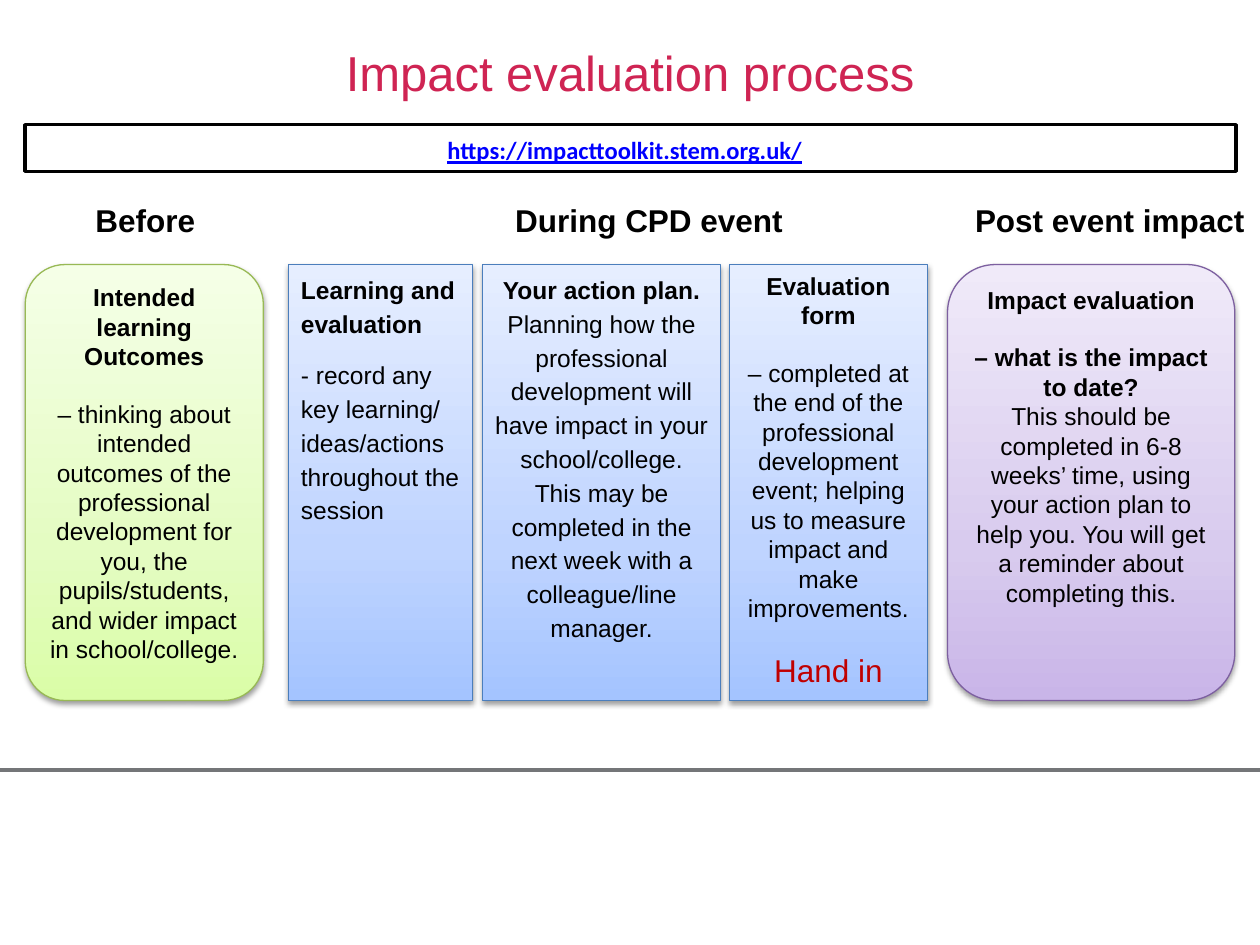
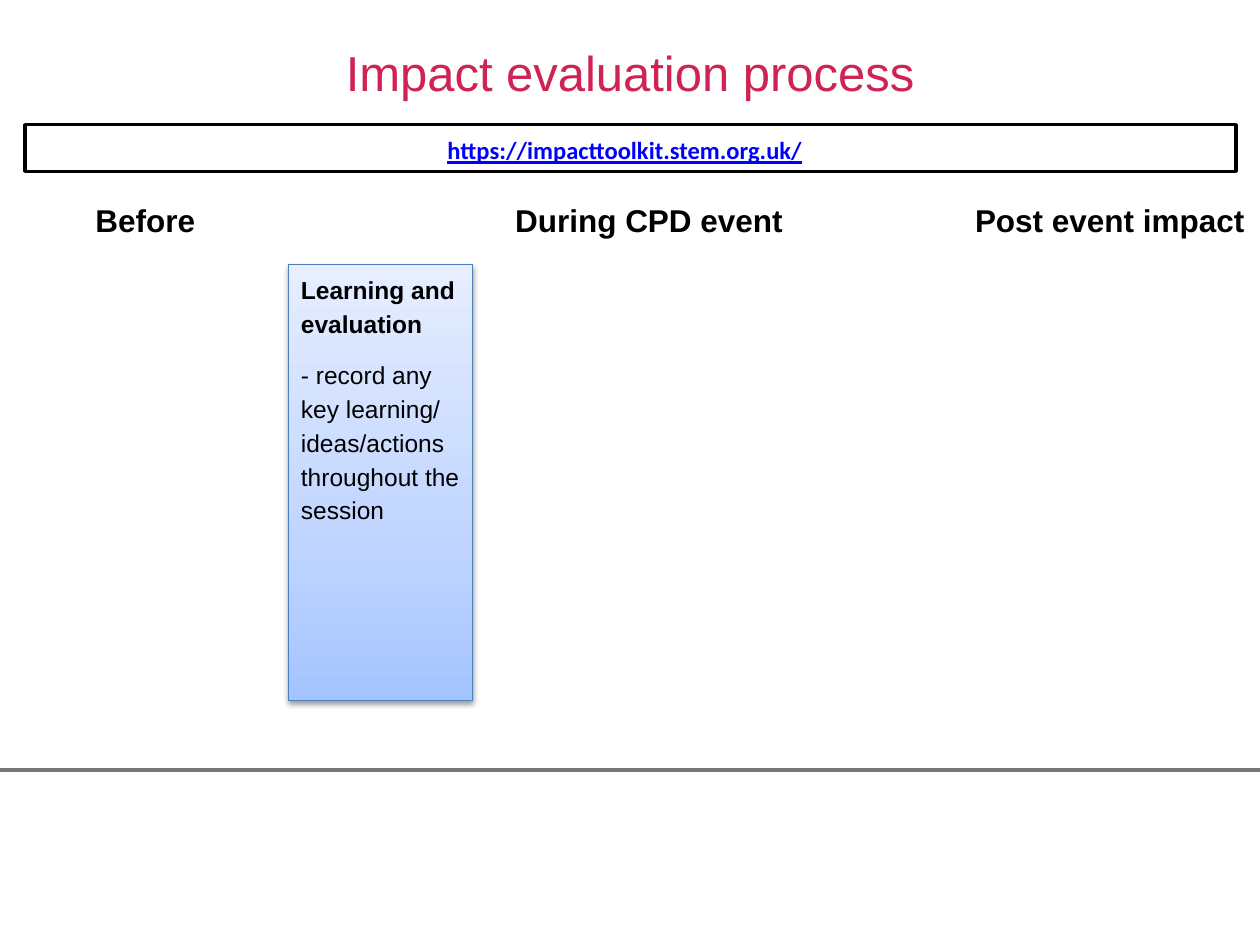
from lxml import etree
from pptx import Presentation
from pptx.dml.color import RGBColor
from pptx.enum.shapes import MSO_CONNECTOR as Connector, MSO_SHAPE as Shape
from pptx.enum.text import MSO_ANCHOR as Anchor, MSO_AUTO_SIZE as AutoSize, PP_ALIGN as Align
from pptx.oxml import parse_xml
from pptx.oxml.ns import nsdecls, qn
from pptx.util import Emu, Pt

PX = 9144  # 100 px to the inch
PAGE_WIDTH, PAGE_HEIGHT = 1000, 750
CARD_TOP, CARD_HEIGHT = 210, 346
BLANK_LINE = 16.1  # points, one 14 pt Arial line

COLORS = {
    "black": "000000", "white": "FFFFFF", "title": "CF2453", "rule": "747678",
    "link": "0000FF", "alert": "C00000",
    "blue line": "4B7EBC", "purple line": "7D60A0", "green line": "98B955",
}
# Gradient stops from the bottom of a card to its top
GRADIENTS = {
    "blue": {0: "A4C4FF", 35: "BFD4FF", 100: "E6EEFF"},
    "purple": {0: "C9B5E8", 35: "D8CBEE", 100: "F0EAF9"},
    "green": {0: "DAFDA7", 35: "E4FCC2", 100: "F5FFE7"},
}
HEADINGS = [("Before", 66, 100), ("During CPD event", 399, 235), ("Post event impact", 764, 236)]

# A paragraph is (spans, space before in points); a span is (text, format)
BOLD = {"bold": True}
LEARNING = {
    "left": 229, "width": 146, "hue": "blue", "align": Align.LEFT, "spacing": 1.15,
    "paragraphs": [
        ([("Learning and evaluation", BOLD)], 0),
        ([("- record any key learning/ ideas/actions throughout the session", {})], 10),
    ],
}
ACTION_PLAN = {
    "left": 383, "width": 189, "hue": "blue", "spacing": 1.15,
    "paragraphs": [
        ([("Your action plan. ", BOLD),
          ("Planning how the professional development will have impact in your "
           "school/college. This may be completed in the next week with a "
           "colleague/line manager.", {})], 0),
    ],
}
EVALUATION_FORM = {
    "left": 579, "width": 157, "hue": "blue",
    "paragraphs": [
        ([("Evaluation form", BOLD)], 0),
        ([("– completed at the end of the professional development event; "
           "helping us to measure impact and make improvements.", {})], BLANK_LINE),
        ([("Hand in", {"size": 18, "color": "alert"})], BLANK_LINE),
    ],
}
IMPACT = {
    "left": 752, "width": 228, "hue": "purple", "outline": Shape.ROUNDED_RECTANGLE,
    "paragraphs": [
        ([("Impact evaluation", BOLD)], 0),
        ([("– what is the impact to date?", BOLD)], BLANK_LINE),
        ([("This should be completed in 6-8 weeks’ time, using your action plan "
           "to help you. You will get a reminder about completing this.", {})], 0),
    ],
}
OUTCOMES = {
    "left": 20, "width": 189, "hue": "green", "outline": Shape.ROUNDED_RECTANGLE,
    "paragraphs": [
        ([("Intended learning Outcomes", BOLD)], 0),
        ([("– thinking about intended outcomes of the professional development "
           "for you, the pupils/students, and wider impact in school/college.", {})], BLANK_LINE),
    ],
}
PAGES = [[LEARNING, ACTION_PLAN, EVALUATION_FORM, IMPACT, OUTCOMES], [LEARNING]]


def px(*lengths):
    return [Emu(length * PX) for length in lengths]


def rgb(name):
    return RGBColor.from_string(COLORS[name])


def add_span(para, text, size=14, font="Arial", color="black", bold=False, underline=False):
    span = para.add_run()
    span.text = text
    span.font.size = Pt(size)
    span.font.name = font
    span.font.color.rgb = rgb(color)
    span.font.bold = bold
    span.font.underline = underline


def fill_gradient(shape, stops):
    """Three stops running upwards."""
    shape.fill.gradient()
    shape.fill.gradient_angle = 90
    stop_list = shape._element.spPr.find(".//" + qn("a:gsLst"))
    for old_stop in list(stop_list):
        stop_list.remove(old_stop)
    for percent, color in stops.items():
        stop_list.append(parse_xml(
            f'<a:gs {nsdecls("a")} pos="{percent * 1000}"><a:srgbClr val="{color}"/></a:gs>'))


def drop_shadow(shape):
    shape.shadow.inherit = False
    shape._element.spPr.find(qn("a:effectLst")).append(parse_xml(
        f'<a:outerShdw {nsdecls("a")} blurRad="40000" dist="20000" dir="5400000" '
        'rotWithShape="0"><a:srgbClr val="000000"><a:alpha val="38000"/></a:srgbClr>'
        '</a:outerShdw>'))


class ProcessDeck:
    def __init__(self):
        self.deck = Presentation()
        self.deck.slide_width, self.deck.slide_height = px(PAGE_WIDTH, PAGE_HEIGHT)
        self.page = None

    def add_page(self, title):
        self.page = self.deck.slides.add_slide(self.deck.slide_layouts[5])
        box = self.page.shapes.title
        box.left, box.top, box.width, box.height = px(0, 29, PAGE_WIDTH, 57)
        frame = box.text_frame
        frame.auto_size = AutoSize.NONE
        frame.vertical_anchor = Anchor.TOP
        para = frame.paragraphs[0]
        para.alignment = Align.CENTER
        add_span(para, title, size=28, color="title")

    def rule(self, top):
        line = self.page.shapes.add_connector(Connector.STRAIGHT, *px(0, top, PAGE_WIDTH, top))
        line.line.color.rgb = rgb("rule")
        line.line.width = Pt(2)
        etree.SubElement(line._element.spPr, qn("a:effectLst"))

    def heading(self, text, left, width):
        box = self.page.shapes.add_textbox(*px(left, 155, width, 40))
        box.text_frame.word_wrap = False
        box.text_frame.auto_size = AutoSize.SHAPE_TO_FIT_TEXT
        add_span(box.text_frame.paragraphs[0], text, size=18, bold=True)

    def shape(self, outline, bounds, line_color, line_width):
        box = self.page.shapes.add_shape(outline, *px(*bounds))
        box.line.color.rgb = rgb(line_color)
        box.line.width = Pt(line_width)
        box.text_frame.word_wrap = True
        box.text_frame.vertical_anchor = Anchor.TOP
        return box

    def address_bar(self, address):
        bar = self.shape(Shape.RECTANGLE, (20, 99, 961, 37), "black", 2)
        bar.shadow.inherit = False
        bar.fill.solid()
        bar.fill.fore_color.rgb = rgb("white")
        bar.text_frame.margin_right = px(19)[0]
        para = bar.text_frame.paragraphs[0]
        para.alignment = Align.CENTER
        para.line_spacing = 1.15
        add_span(para, address, font="Calibri", color="link", bold=True, underline=True)

    def card(self, left, width, hue, paragraphs, outline=Shape.RECTANGLE,
             align=Align.CENTER, spacing=1.0):
        box = self.shape(outline, (left, CARD_TOP, width, CARD_HEIGHT), f"{hue} line", 0.75)
        fill_gradient(box, GRADIENTS[hue])
        drop_shadow(box)
        frame = box.text_frame
        for index, (spans, space_before) in enumerate(paragraphs):
            para = frame.add_paragraph() if index else frame.paragraphs[0]
            para.alignment = align
            para.line_spacing = spacing
            para.space_before = Pt(space_before)
            for text, style in spans:
                add_span(para, text, **style)


def main():
    process = ProcessDeck()
    for cards in PAGES:
        process.add_page("Impact evaluation process")
        process.rule(611)
        for card in cards:
            process.card(**card)
        for heading in HEADINGS:
            process.heading(*heading)
        process.address_bar("https://impacttoolkit.stem.org.uk/")
    process.deck.save("out.pptx")


if __name__ == "__main__":
    main()
